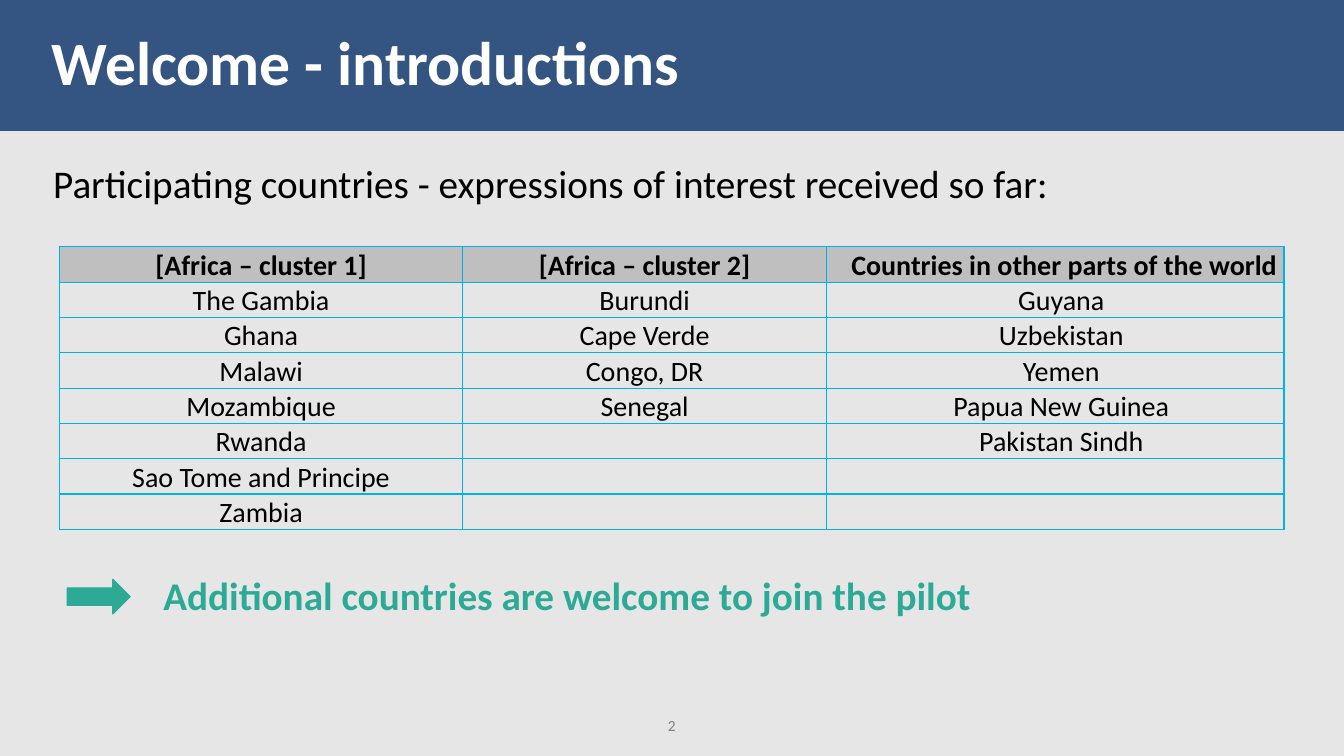
from dataclasses import dataclass
from itertools import zip_longest

from lxml.etree import SubElement
from pptx import Presentation
from pptx.dml.color import RGBColor
from pptx.enum.shapes import MSO_SHAPE
from pptx.enum.text import MSO_ANCHOR, PP_ALIGN
from pptx.oxml.ns import qn
from pptx.slide import Slide
from pptx.table import _Cell
from pptx.text.text import TextFrame
from pptx.util import Cm, Pt

FONT = "Calibri"
BACKGROUND = RGBColor(0xE7, 0xE6, 0xE6)
NAVY = RGBColor(0x34, 0x54, 0x82)
TEAL = RGBColor(0x2C, 0xAA, 0x96)
SKY = RGBColor(0x00, 0xB0, 0xF0)
SILVER = RGBColor(0xBF, 0xBF, 0xBF)
GRAY = RGBColor(0x80, 0x80, 0x80)
BLACK = RGBColor(0, 0, 0)
WHITE = RGBColor(0xFF, 0xFF, 0xFF)

SLIDE_WIDTH, SLIDE_HEIGHT = 33.87, 19.05
ROW_HEIGHT = 0.89


@dataclass(frozen=True)
class TextStyle:
    size: float
    color: RGBColor
    bold: bool = False
    align: PP_ALIGN = PP_ALIGN.LEFT
    line_spacing: float = 1.0


@dataclass(frozen=True)
class Label:
    text: str
    left: float
    top: float
    width: float
    height: float
    style: TextStyle
    wrap: bool = True


@dataclass(frozen=True)
class Cluster:
    """One table column; the indents are in centimetres."""
    heading: str
    countries: tuple[str, ...]
    width: float
    heading_indent: float = 0.18
    indent: float = 0.18
    right_inset: float = 0.18


TITLE_STYLE = TextStyle(44, WHITE, bold=True, line_spacing=0.9)
HEADING_STYLE = TextStyle(20, BLACK, True, PP_ALIGN.CENTER, 1.05)
COUNTRY_STYLE = TextStyle(20, BLACK, False, PP_ALIGN.CENTER, 1.05)

LABELS = (
    Label("Participating countries - expressions of interest received so far:",
          1.09, 3.89, 26.09, 1.45, TextStyle(28, BLACK), wrap=False),
    Label("Additional countries are welcome to join the pilot",
          3.87, 14.27, 27.5, 1.45, TextStyle(28, TEAL, bold=True)),
    Label("2", 16.23, 17.91, 1.4, 0.74,
          TextStyle(11, GRAY, align=PP_ALIGN.CENTER)),
)

CLUSTERS = (
    Cluster("[Africa – cluster 1]",
            ("The Gambia", "Ghana", "Malawi", "Mozambique", "Rwanda",
             "Sao Tome and Principe", "Zambia"), 10.16),
    Cluster("[Africa – cluster 2]",
            ("Burundi", "Cape Verde", "Congo, DR", "Senegal"), 9.17),
    Cluster("Countries in other parts of the world",
            ("Guyana", "Uzbekistan", "Yemen", "Papua New Guinea",
             "Pakistan Sindh"), 11.53,
            heading_indent=0.45, indent=0.3, right_inset=0),
)


def write(frame: TextFrame, text: str, style: TextStyle) -> None:
    para = frame.paragraphs[0]
    para.text = text
    para.alignment = style.align
    para.line_spacing = style.line_spacing
    para.font.name = FONT
    para.font.size = Pt(style.size)
    para.font.bold = style.bold
    para.font.color.rgb = style.color


def add_label(page: Slide, label: Label) -> None:
    box = page.shapes.add_textbox(Cm(label.left), Cm(label.top),
                                  Cm(label.width), Cm(label.height))
    box.text_frame.word_wrap = label.wrap
    write(box.text_frame, label.text, label.style)


def add_title_band(page: Slide) -> None:
    band = page.shapes.add_shape(MSO_SHAPE.RECTANGLE, 0, 0,
                                 Cm(SLIDE_WIDTH), Cm(3.3))
    band.shadow.inherit = False
    band.fill.solid()
    band.fill.fore_color.rgb = NAVY
    band.line.fill.background()
    frame = band.text_frame
    frame.margin_left = Cm(1.3)
    frame.vertical_anchor = MSO_ANCHOR.MIDDLE
    write(frame, "Welcome - introductions", TITLE_STYLE)


def add_arrow(page: Slide) -> None:
    arrow = page.shapes.add_shape(MSO_SHAPE.RIGHT_ARROW, Cm(1.7), Cm(14.6),
                                  Cm(1.58), Cm(0.87))
    arrow.shadow.inherit = False
    arrow.fill.solid()
    arrow.fill.fore_color.rgb = TEAL
    arrow.line.color.rgb = TEAL
    arrow.line.width = Pt(1)


def add_borders(cell: _Cell) -> None:
    properties = cell._tc.get_or_add_tcPr()
    for side in ("a:lnL", "a:lnR", "a:lnT", "a:lnB"):
        line = SubElement(properties, qn(side), w=str(Pt(1)))
        fill = SubElement(line, qn("a:solidFill"))
        SubElement(fill, qn("a:srgbClr"), val=str(SKY))


def fill_cell(cell: _Cell, text: str, cluster: Cluster, heading: bool) -> None:
    add_borders(cell)
    cell.margin_left = Cm(cluster.heading_indent if heading else cluster.indent)
    cell.margin_right = Cm(cluster.right_inset)
    cell.margin_top = cell.margin_bottom = 0
    if heading:
        cell.fill.solid()
        cell.fill.fore_color.rgb = SILVER
        cell.vertical_anchor = MSO_ANCHOR.MIDDLE
    else:
        cell.fill.background()
        cell.vertical_anchor = MSO_ANCHOR.BOTTOM
    write(cell.text_frame, text, HEADING_STYLE if heading else COUNTRY_STYLE)


def add_country_table(page: Slide) -> None:
    countries = zip_longest(*(cluster.countries for cluster in CLUSTERS),
                            fillvalue="")
    rows = [[cluster.heading for cluster in CLUSTERS], *countries]
    width = sum(cluster.width for cluster in CLUSTERS)
    table = page.shapes.add_table(
        len(rows), len(CLUSTERS), Cm(1.5), Cm(6.22),
        Cm(width), Cm(ROW_HEIGHT * len(rows))).table
    table.first_row = False
    table.horz_banding = False
    for column, cluster in zip(table.columns, CLUSTERS):
        column.width = Cm(cluster.width)
    for row_index, texts in enumerate(rows):
        table.rows[row_index].height = Cm(ROW_HEIGHT)
        for column_index, (text, cluster) in enumerate(zip(texts, CLUSTERS)):
            fill_cell(table.cell(row_index, column_index), text, cluster,
                      heading=row_index == 0)


def main() -> None:
    deck = Presentation()
    deck.slide_width = Cm(SLIDE_WIDTH)
    deck.slide_height = Cm(SLIDE_HEIGHT)
    page = deck.slides.add_slide(deck.slide_layouts[6])
    page.background.fill.solid()
    page.background.fill.fore_color.rgb = BACKGROUND
    add_title_band(page)
    for label in LABELS:
        add_label(page, label)
    add_arrow(page)
    add_country_table(page)
    deck.save("out.pptx")


if __name__ == "__main__":
    main()
